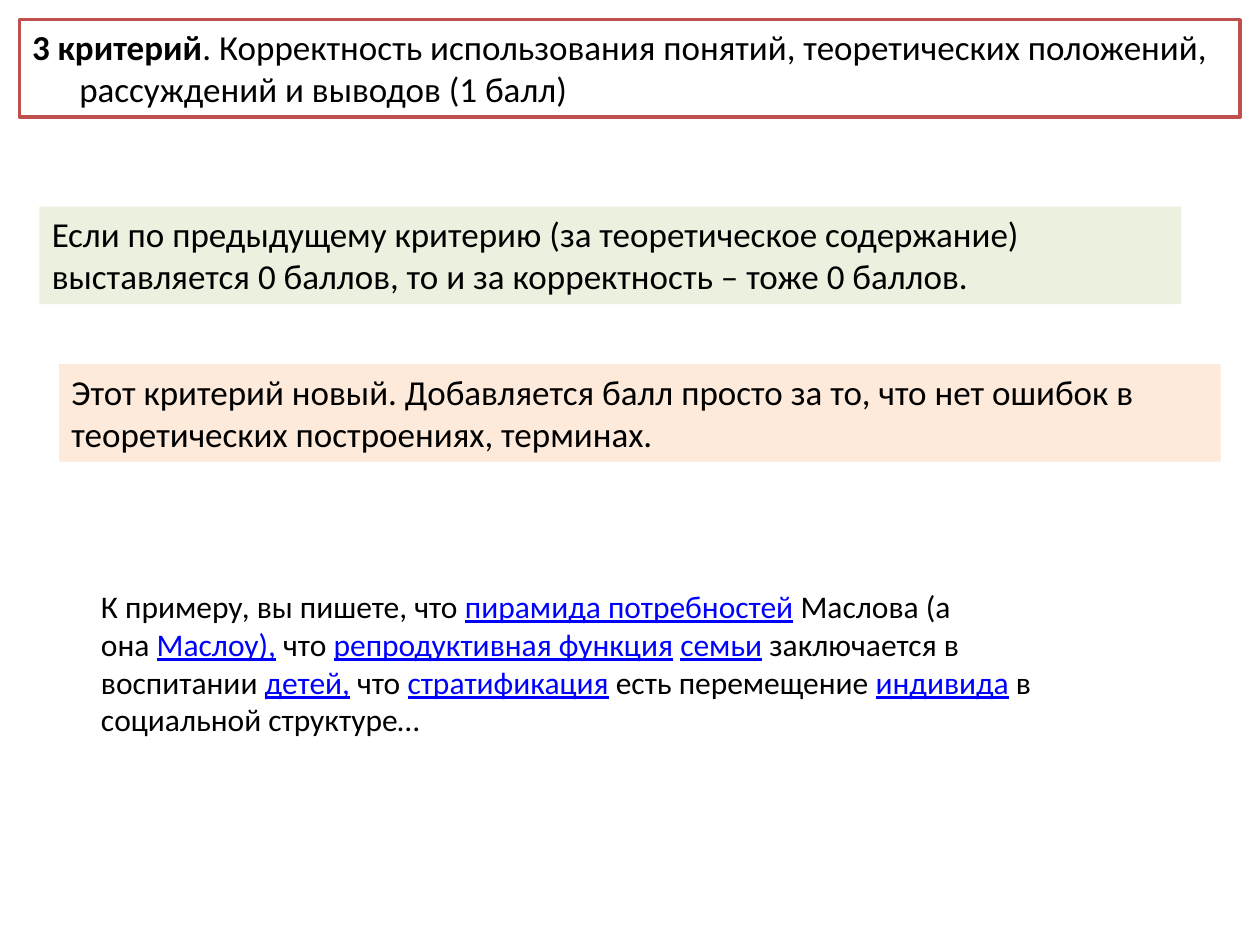
from dataclasses import dataclass
from typing import Optional

import pptx
import pptx.dml.color
import pptx.enum.shapes
import pptx.enum.text
import pptx.util

RGBColor = pptx.dml.color.RGBColor
BLACK = RGBColor(0x00, 0x00, 0x00)
WHITE = RGBColor(0xFF, 0xFF, 0xFF)
RED = RGBColor(0xC0, 0x50, 0x4D)
PALE_GREEN = RGBColor(0xEB, 0xF1, 0xDE)
PALE_ORANGE = RGBColor(0xFD, 0xEA, 0xDA)
LINK_BLUE = RGBColor(0x00, 0x00, 0xFF)

FONT_NAME = "Calibri"
NO_BREAK_SPACE = chr(160)  # typed as ~ in the wording below
SLIDE_WIDTH = pptx.util.Inches(10)
SLIDE_HEIGHT = pptx.util.Inches(7.5)
COLUMNS, ROWS = 64, 48


@dataclass(frozen=True)
class Segment:
    text: str
    bold: bool = False
    link: bool = False


@dataclass(frozen=True)
class Panel:
    """A text panel; its place and size are in grid columns and rows."""
    left: float
    top: float
    width: float
    height: float
    segments: tuple[Segment, ...]
    size: int = 20
    fill: Optional[RGBColor] = None
    line: Optional[RGBColor] = None
    hanging: float = 0


PANELS = (
    Panel(1, 1, 62, 4.95, (
        Segment("3 критерий", bold=True),
        Segment(". Корректность использования понятий, теоретических положений, "
                "рассуждений и выводов (1 балл)"),
    ), fill=WHITE, line=RED, hanging=2.4),
    Panel(2, 10.5, 58, 4.95, (
        Segment("Если по предыдущему критерию (за теоретическое содержание) "
                "выставляется 0 баллов, то и за корректность – тоже 0 баллов."),
    ), fill=PALE_GREEN),
    Panel(3, 18.5, 59, 4.95, (
        Segment("Этот критерий новый. Добавляется балл просто за то, что нет "
                "ошибок в теоретических построениях, терминах."),
    ), fill=PALE_ORANGE),
    Panel(4.5, 29.5, 56.5, 8.4, (
        Segment("К примеру, вы пишете, что~"),
        Segment("пирамида потребностей", link=True),
        Segment("~Маслова (а она~"),
        Segment("Маслоу),", link=True),
        Segment("~что~"),
        Segment("репродуктивная функция", link=True),
        Segment("~"),
        Segment("семьи", link=True),
        Segment("~заключается в воспитании~"),
        Segment("детей,", link=True),
        Segment("~что~"),
        Segment("стратификация", link=True),
        Segment("~есть перемещение~"),
        Segment("индивида", link=True),
        Segment("~в социальной структуре…"),
    ), size=18),
)


def across(columns: float) -> pptx.util.Emu:
    return pptx.util.Emu(round(SLIDE_WIDTH * columns / COLUMNS))


def down(rows: float) -> pptx.util.Emu:
    return pptx.util.Emu(round(SLIDE_HEIGHT * rows / ROWS))


def add_panel_shape(slide: pptx.slide.Slide, panel: Panel) -> pptx.shapes.autoshape.Shape:
    """Add a text box, or a rectangle where the panel has a fill."""
    place = (across(panel.left), down(panel.top), across(panel.width), down(panel.height))
    if panel.fill is None:
        return slide.shapes.add_textbox(*place)
    shape = slide.shapes.add_shape(pptx.enum.shapes.MSO_SHAPE.RECTANGLE, *place)
    shape.shadow.inherit = False
    shape.fill.solid()
    shape.fill.fore_color.rgb = panel.fill
    if panel.line is None:
        shape.line.fill.background()
    else:
        shape.line.color.rgb = panel.line
        shape.line.width = pptx.util.Pt(2)
    return shape


def draw_panel(slide: pptx.slide.Slide, panel: Panel) -> None:
    frame = add_panel_shape(slide, panel).text_frame
    frame.word_wrap = True
    frame.auto_size = pptx.enum.text.MSO_AUTO_SIZE.SHAPE_TO_FIT_TEXT
    frame.vertical_anchor = pptx.enum.text.MSO_ANCHOR.TOP
    paragraph = frame.paragraphs[0]
    paragraph.alignment = pptx.enum.text.PP_ALIGN.LEFT
    if panel.hanging:
        properties = paragraph._p.get_or_add_pPr()
        properties.set("marL", str(across(panel.hanging)))
        properties.set("indent", str(-across(panel.hanging)))
    for segment in panel.segments:
        run = paragraph.add_run()
        run.text = segment.text.replace("~", NO_BREAK_SPACE)
        run.font.name = FONT_NAME
        run.font.size = pptx.util.Pt(panel.size)
        run.font.bold = segment.bold
        run.font.underline = segment.link
        run.font.color.rgb = LINK_BLUE if segment.link else BLACK


def main() -> None:
    presentation = pptx.Presentation()
    presentation.slide_width = SLIDE_WIDTH
    presentation.slide_height = SLIDE_HEIGHT
    slide = presentation.slides.add_slide(presentation.slide_layouts[6])
    for panel in PANELS:
        draw_panel(slide, panel)
    presentation.save("out.pptx")


if __name__ == "__main__":
    main()
